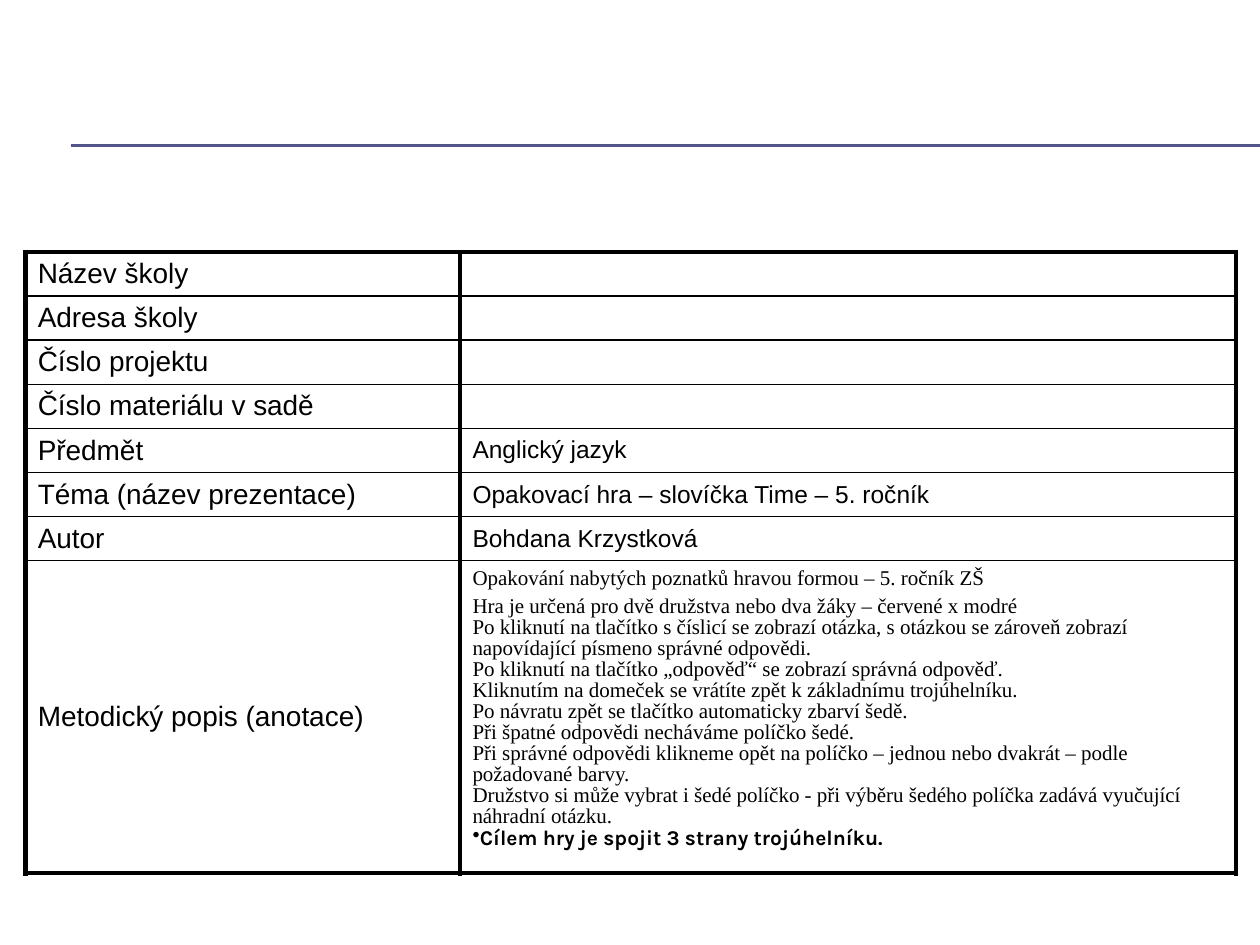
from lxml import etree
from pptx import Presentation
from pptx import util as u
from pptx.dml.color import RGBColor
from pptx.enum import shapes, text
from pptx.oxml.ns import qn

LABELS = ["Název školy", "Adresa školy", "Číslo projektu",
          "Číslo materiálu v sadě", "Předmět", "Téma (název prezentace)",
          "Autor", "Metodický popis (anotace)"]
VALUES = ["", "", "", "", "Anglický jazyk",
          "Opakovací hra – slovíčka Time – 5. ročník", "Bohdana Krzystková"]
INTRO = ["Opakování nabytých poznatků hravou formou – 5. ročník ZŠ",
         "Hra je určená pro dvě družstva nebo dva žáky – červené x modré"]
RULES = [
    "Po kliknutí na tlačítko s číslicí se zobrazí otázka, s otázkou se "
    "zároveň zobrazí napovídající písmeno správné odpovědi.",
    "Po kliknutí na tlačítko „odpověď“ se zobrazí správná odpověď.",
    "Kliknutím na domeček se vrátíte zpět k základnímu trojúhelníku.",
    "Po návratu zpět se tlačítko automaticky zbarví šedě.",
    "Při špatné odpovědi necháváme políčko šedé.",
    "Při správné odpovědi klikneme opět na políčko – jednou nebo dvakrát – "
    "podle požadované barvy.",
    "Družstvo si může vybrat i šedé políčko - při výběru šedého políčka "
    "zadává vyučující náhradní otázku.",
]
GOAL = "Cílem hry je spojit 3 strany trojúhelníku."


def color(code):
    return RGBColor.from_string(code)


class Sheet:
    ink, accent = "000000", "53548A"
    thick, thin = 3, 1

    def __init__(self, slide):
        self.slide = slide

    def line(self, top):
        rule = self.slide.shapes.add_connector(
            shapes.MSO_CONNECTOR.STRAIGHT, u.Inches(0.56), u.Inches(top),
            u.Inches(10), u.Inches(top))
        rule.line.color.rgb = color(self.accent)
        rule.line.width = u.Pt(0.75)
        props = rule._element.spPr
        etree.SubElement(props, qn("a:effectLst"))

    def table(self, left, top, cols, rows):
        grid = self.slide.shapes.add_table(
            len(rows), len(cols), u.Inches(left), u.Inches(top),
            u.Inches(sum(cols)), u.Inches(sum(rows))).table
        grid.first_row = grid.horz_banding = False
        for col, width in zip(grid.columns, cols):
            col.width = u.Inches(width)
        last = len(rows) - 1
        for i, height in enumerate(rows):
            grid.rows[i].height = u.Inches(height)
            for cell in grid.rows[i].cells:
                cell.fill.background()
                cell.vertical_anchor = text.MSO_ANCHOR.MIDDLE
                self.frame(cell, self.thin if i else self.thick,
                           self.thick if i == last else self.thin)
        return grid

    def frame(self, cell, upper, lower):
        """Draw thick sides and the given top and bottom borders."""
        props = cell._tc.get_or_add_tcPr()
        sides = [("L", self.thick), ("R", self.thick),
                 ("T", upper), ("B", lower)]
        for i, (side, width) in enumerate(sides):
            edge = etree.Element(qn("a:ln" + side), w=str(u.Pt(width)))
            fill = etree.SubElement(edge, qn("a:solidFill"))
            etree.SubElement(fill, qn("a:srgbClr"), val=self.ink)
            props.insert(i, edge)

    def style(self, para, size, font="Arial", bold=False):
        for run in para.runs:
            run.font.size = u.Pt(size)
            run.font.name = font
            run.font.bold = bold
            run.font.color.rgb = color(self.ink)
        if not para.runs:
            etree.SubElement(para._p, qn("a:endParaRPr"), sz=str(size * 100))

    def label(self, cell, words, size):
        cell.text_frame.text = words
        self.style(cell.text_frame.paragraphs[0], size)

    def notes(self, cell):
        """Fill the annotation cell: intro, tight rules, bulleted goal."""
        cell.vertical_anchor = text.MSO_ANCHOR.TOP
        cell.text_frame.text = "\n".join(INTRO + RULES + [GOAL])
        paras = cell.text_frame.paragraphs
        for i, para in enumerate(paras):
            self.style(para, 12, "Times New Roman")
            if i < len(INTRO):
                para.space_before = u.Pt(2.4)
            else:
                para.line_spacing = 0.9
        goal = paras[-1]
        self.style(goal, 12, "Karla", True)
        props = goal._p.get_or_add_pPr()
        props.set("marL", "0")
        props.set("indent", "0")
        etree.SubElement(props, qn("a:buChar"), char="•")


def main():
    deck = Presentation()
    deck.slide_width, deck.slide_height = u.Inches(10), u.Inches(7.5)
    sheet = Sheet(deck.slides.add_slide(deck.slide_layouts[6]))
    for top in (1.15, 1.16):
        sheet.line(top)
    grid = sheet.table(0.2, 2, [3.45, 6.16], [0.35] * len(VALUES) + [2.48])
    for i, words in enumerate(LABELS):
        sheet.label(grid.cell(i, 0), words, 16)
    for i, words in enumerate(VALUES):
        sheet.label(grid.cell(i, 1), words, 14)
    sheet.notes(grid.cell(len(VALUES), 1))
    deck.save("out.pptx")


if __name__ == "__main__":
    main()
